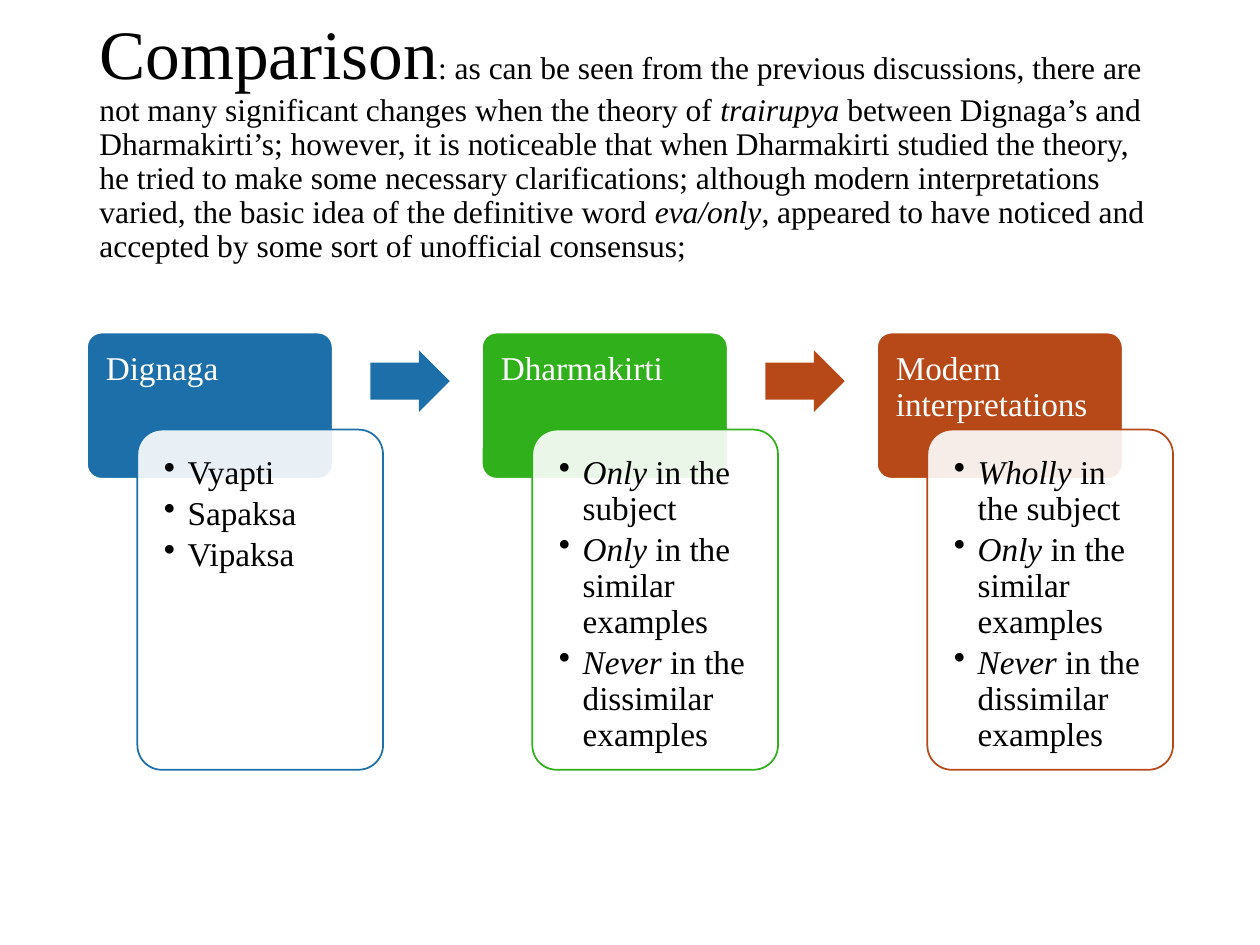
from dataclasses import dataclass

from lxml import etree
from pptx import Presentation
from pptx.dml.color import RGBColor
from pptx.enum.shapes import MSO_SHAPE
from pptx.enum.text import MSO_ANCHOR
from pptx.oxml.ns import qn
from pptx.util import Inches, Pt

ROUNDED = MSO_SHAPE.ROUNDED_RECTANGLE
ARROW = MSO_SHAPE.RIGHT_ARROW
TOP, MIDDLE = MSO_ANCHOR.TOP, MSO_ANCHOR.MIDDLE


@dataclass(frozen=True)
class Theme:
    """Colours, font and type sizes of the slide."""
    font: str = "Times New Roman"
    ink: str = "000000"
    paper: str = "FFFFFF"
    blue: str = "1D6FA9"
    green: str = "30B01B"
    rust: str = "B74919"
    title: float = 39.6
    intro: float = 18
    card: float = 19


THEME = Theme()

INTRO = [
    (": as can be seen from the previous discussions, there are not many significant "
     "changes when the theory of ", False),
    ("trairupya", True),
    (" between Dignaga’s and Dharmakirti’s; however, it is noticeable that when "
     "Dharmakirti studied the theory, he tried to make some necessary clarifications; "
     "although modern interpretations varied, the basic idea of the definitive word ", False),
    ("eva/only", True),
    (", appeared to have noticed and accepted by some sort of unofficial consensus;", False),
]
SHARED_POINTS = [
    [("Only", True), (" in the similar examples", False)],
    [("Never", True), (" in the dissimilar examples", False)],
]
STAGES = [
    ("Dignaga", THEME.blue, [[(word, False)] for word in ("Vyapti", "Sapaksa", "Vipaksa")]),
    ("Dharmakirti", THEME.green, [[("Only", True), (" in the subject", False)], *SHARED_POINTS]),
    ("Modern interpretations", THEME.rust,
     [[("Wholly", True), (" in the subject", False)], *SHARED_POINTS]),
]
ARROW_COLOURS = [THEME.blue, THEME.rust]


def apply(target, **values):
    """Set each named format value on the target."""
    for name, value in values.items():
        setattr(target, name, value)


def add_spans(para, spans, size, colour=THEME.ink):
    """Write (text, italic) spans into a paragraph."""
    para.line_spacing = 0.9
    for text, italic in spans:
        span = para.add_run()
        span.text = text
        apply(span.font, name=THEME.font, size=Pt(size), italic=italic)
        span.font.color.rgb = RGBColor.from_string(colour)


def add_bullet(para):
    """Give a paragraph a hanging round bullet."""
    props = para._p.get_or_add_pPr()
    props.set("marL", str(Inches(0.19)))
    props.set("indent", str(-Inches(0.19)))
    etree.SubElement(props, qn("a:buChar")).set("char", "•")


def add_text_box(page, left, top, width, height, inset, bottom, anchor=TOP):
    """Add a wrapping text box and return its frame."""
    box = page.shapes.add_textbox(Inches(left), Inches(top), Inches(width), Inches(height))
    frame = box.text_frame
    apply(frame, word_wrap=True, vertical_anchor=anchor,
          margin_left=Inches(inset), margin_right=Inches(inset),
          margin_top=Inches(bottom if anchor == MIDDLE else inset),
          margin_bottom=Inches(bottom))
    return frame


def add_block(page, kind, box, adjustments, fill, line=None, opacity=None):
    """Add a flat preset shape, outlined and see-through if asked."""
    block = page.shapes.add_shape(kind, *map(Inches, box))
    block.shadow.inherit = False
    for index, value in enumerate(adjustments):
        block.adjustments[index] = value
    block.fill.solid()
    block.fill.fore_color.rgb = RGBColor.from_string(fill)
    if opacity:
        colour = block._element.spPr.find(qn("a:solidFill"))[0]
        etree.SubElement(colour, qn("a:alpha")).set("val", str(opacity * 1000))
    if line:
        block.line.color.rgb = RGBColor.from_string(line)
        block.line.width = Pt(1)
    else:
        block.line.fill.background()


def add_heading(page, left, top, width, height):
    """Place the title word and the introduction that follows it."""
    frame = add_text_box(page, left, top, width, height, 0.1, 0.05, MIDDLE)
    para = frame.paragraphs[0]
    add_spans(para, [("Comparison", False)], THEME.title)
    add_spans(para, INTRO, THEME.intro)


def add_stage(page, left, top, width, height, stage):
    """Place a coloured heading card with its overlapping list card."""
    name, colour, points = stage
    card_width, shift, drop, pad = width - 0.4, 0.4, 0.77, 0.06
    add_block(page, ROUNDED, (left, top, card_width, 1.16), [0.1], colour, THEME.paper)
    label = add_text_box(page, left, top, card_width, drop, 0.15, 0.08)
    add_spans(label.paragraphs[0], [(name, False)], THEME.card, THEME.paper)

    list_box = (left + shift, top + drop, card_width, height - drop)
    add_block(page, ROUNDED, list_box, [0.1], THEME.paper, colour, 90)
    frame = add_text_box(page, left + shift + pad, top + drop + pad,
                         card_width - 2 * pad, height - drop - 2 * pad, 0.15, 0.15)
    for index, spans in enumerate(points):
        para = frame.add_paragraph() if index else frame.paragraphs[0]
        add_spans(para, spans, THEME.card)
        para.space_after = Pt(THEME.card * 0.15)
        add_bullet(para)


def add_flow(page, left, top, width, height):
    """Place the stages at an equal pitch with arrows between them."""
    stage_width = 2.35
    pitch = (width - stage_width) / (len(STAGES) - 1)
    for index, stage in enumerate(STAGES):
        add_stage(page, left + index * pitch, top, stage_width, height, stage)
    for index, colour in enumerate(ARROW_COLOURS):
        box = (left + index * pitch + 2.25, top + 0.14, 0.63, 0.49)
        add_block(page, ARROW, box, [0.6, 0.5], colour)


def main():
    """Build and save the comparison slide."""
    deck = Presentation()
    apply(deck, slide_width=Inches(10), slide_height=Inches(7.5))
    page = deck.slides.add_slide(deck.slide_layouts[6])
    add_heading(page, 0.69, 0.4, 8.62, 1.45)
    add_flow(page, 0.69, 2.64, 8.62, 3.47)
    deck.save("out.pptx")


if __name__ == "__main__":
    main()
